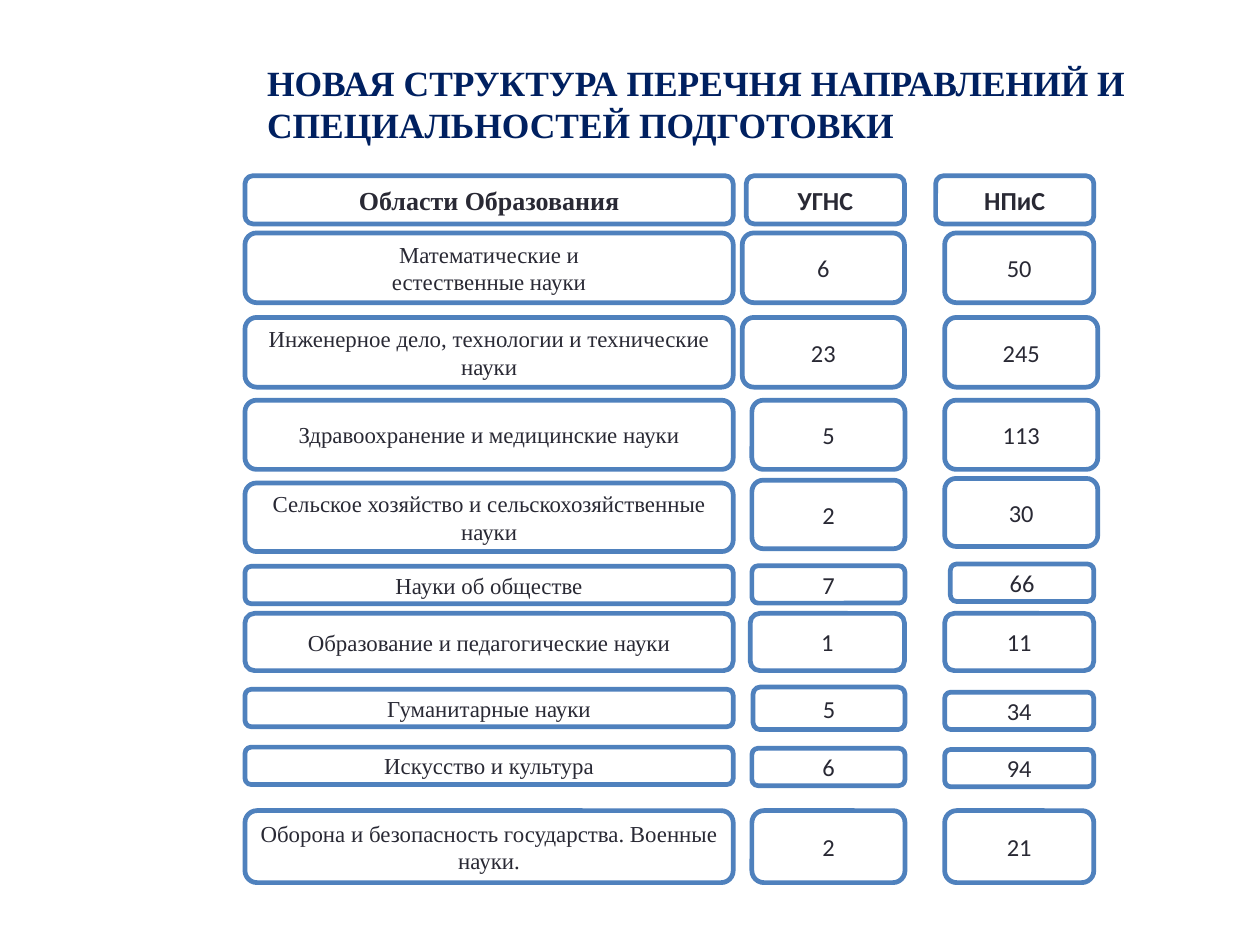
from pptx import Presentation
from pptx.dml.color import RGBColor
from pptx.enum.shapes import MSO_SHAPE
from pptx.enum.text import MSO_ANCHOR, PP_ALIGN
from pptx.util import Pt

ROUNDED = MSO_SHAPE.ROUNDED_RECTANGLE
MIDDLE = MSO_ANCHOR.MIDDLE
CENTER = PP_ALIGN.CENTER
PX = 9144

SERIF, SANS = "Times New Roman", "Calibri"
NAVY, INK, BLUE, WHITE = "002060", "292934", "4F81BD", "FFFFFF"

TITLE = "НОВАЯ СТРУКТУРА ПЕРЕЧНЯ НАПРАВЛЕНИЙ И СПЕЦИАЛЬНОСТЕЙ ПОДГОТОВКИ"
AREA_LEFT, AREA_WIDTH = 432, 861

# Each row: top, height, area, then groups and programmes as
# (value, left, width, shift down, extra height).
ROWS = [
    (310, 85, "Области Образования", ("УГНС", 1316, 279, 0, 0), ("НПиС", 1650, 279, 0, 0)),
    (411, 123, "Математические и\nестественные науки", ("6", 1309, 286, 0, 0), ("50", 1666, 263, 0, 0)),
    (560, 123, "Инженерное дело, технологии и технические науки",
     ("23", 1309, 286, 0, 0), ("245", 1666, 270, 0, 0)),
    (706, 122, "Здравоохранение и медицинские науки", ("5", 1326, 270, 0, 0), ("113", 1666, 270, 0, 0)),
    (852, 121, "Сельское хозяйство и сельскохозяйственные науки",
     ("2", 1326, 270, -5, 0), ("30", 1666, 270, -8, -1)),
    (999, 66, "Науки об обществе", ("7", 1326, 270, -1, 0), ("66", 1676, 253, -4, 0)),
    (1082, 101, "Образование и педагогические науки", ("1", 1323, 272, 0, 0), ("11", 1666, 263, 0, 0)),
    (1216, 66, "Гуманитарные науки", ("5", 1328, 268, -4, 9), ("34", 1666, 263, 5, 0)),
    (1318, 66, "Искусство и культура", ("6", 1326, 270, 2, 0), ("94", 1666, 263, 4, 0)),
    (1430, 127, "Оборона и безопасность государства. Военные науки.",
     ("2", 1326, 270, 0, 0), ("21", 1666, 263, 0, 0)),
]


def color(value):
    return RGBColor.from_string(value)


def write(frame, text, font_name, size, ink, bold, align=None):
    frame.word_wrap = True
    frame.vertical_anchor = MIDDLE
    frame.text = text
    for paragraph in frame.paragraphs:
        paragraph.alignment = align
        font = paragraph.font
        font.name, font.size, font.bold = font_name, Pt(size), bold
        font.color.rgb = color(ink)


def add_cell(slide, text, box, font_name, size, bold):
    cell = slide.shapes.add_shape(ROUNDED, *(v * PX for v in box))
    cell.shadow.inherit = False
    cell.fill.solid()
    cell.fill.fore_color.rgb = color(WHITE)
    cell.line.color.rgb = color(BLUE)
    cell.line.width = Pt(6)
    write(cell.text_frame, text, font_name, size, INK, bold, CENTER)


def main():
    deck = Presentation()
    deck.slide_width, deck.slide_height = 2222 * PX, 1667 * PX
    slide = deck.slides.add_slide(deck.slide_layouts[6])

    title = slide.shapes.add_textbox(449 * PX, 63 * PX, 1748 * PX, 239 * PX).text_frame
    title.margin_left = title.margin_right = 22 * PX
    title.margin_top = title.margin_bottom = 11 * PX
    write(title, TITLE, SERIF, 45, NAVY, True)

    for index, (top, height, area, *counts) in enumerate(ROWS):
        header = index == 0
        area_size, count_size = (33, 33) if header else (29, 31)
        add_cell(slide, area, (AREA_LEFT, top, AREA_WIDTH, height), SERIF, area_size, header)
        for value, left, width, shift, extra in counts:
            box = (left, top + shift, width, height + extra)
            add_cell(slide, value, box, SANS, count_size, header)

    deck.save("out.pptx")


if __name__ == "__main__":
    main()
